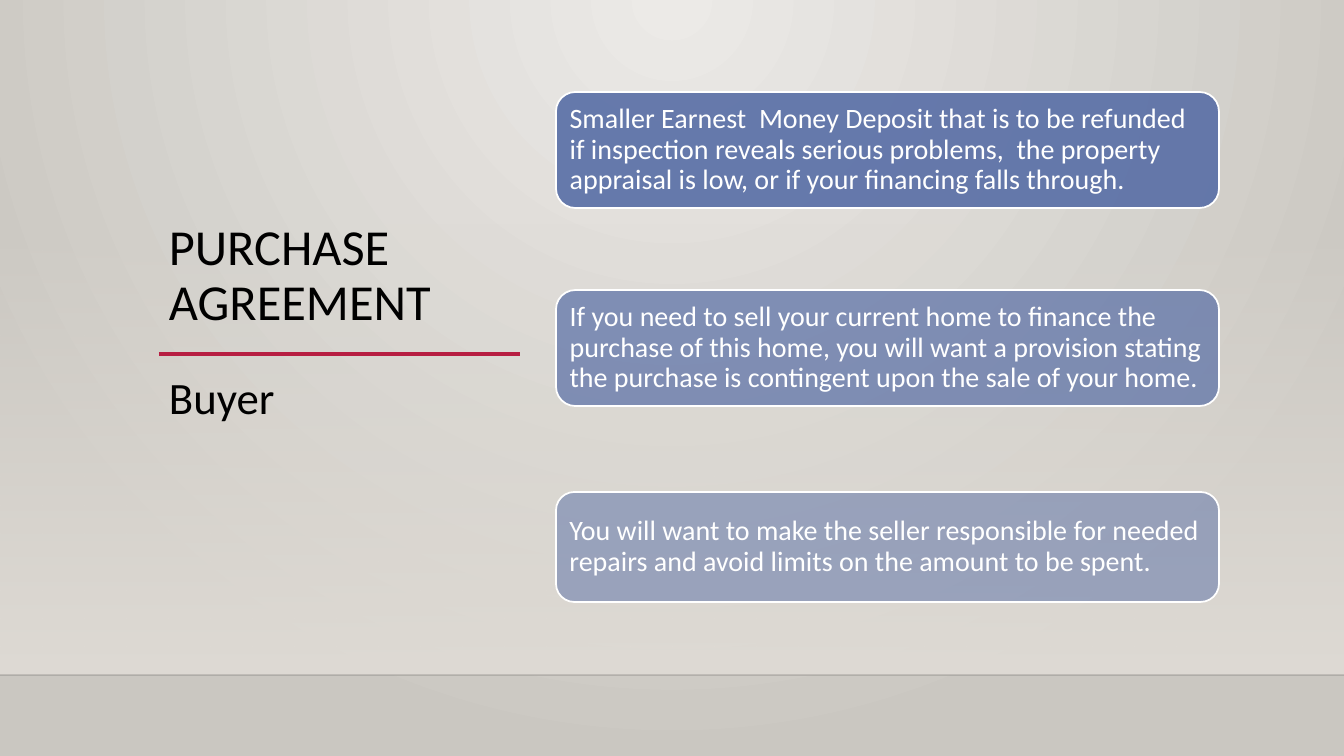
"""Build the buyer's purchase agreement slide."""
from pptx import Presentation
from pptx import util as u
from pptx.dml.color import RGBColor
from pptx.enum import shapes, text
from pptx.oxml import parse_xml
from pptx.oxml.ns import nsdecls, qn

TITLE = "PURCHASE AGREEMENT"
ROLE = "Buyer"
CARDS = [
    ("Smaller Earnest  Money Deposit that is to be refunded if inspection reveals "
     "serious problems,  the property appraisal is low, or if your financing falls through.",
     92, 116, 90),
    ("If you need to sell your current home to finance the purchase of this home, you will "
     "want a provision stating the purchase is contingent upon the sale of your home.",
     290, 116, 70),
    ("You will want to make the seller responsible for needed repairs and avoid limits "
     "on the amount to be spent.",
     492, 110, 50),
]
THEME = {
    "font": "Calibri", "ink": "000000", "white": "FFFFFF", "card": "586EA6",
    "rule": "B71E42", "edge": "000001", "glow": "ECEAE7", "wall": "CAC7C1",
    "haze": "DFDBD5", "title": 36, "role": 32, "body": 20,
}
WIDE, HIGH = 1344, 756
FLOOR, MID = 675, 354
LEFT, SPAN = 159, 361
CARD_X, CARD_W = 556, 663


def px(n):
    return round(n * 914400 / 100.8)


def box(*nums):
    return [px(n) for n in nums]


def rgb(key):
    return RGBColor.from_string(THEME[key])


def fade(fill, alpha):
    tint = fill._xPr.find(".//" + qn("a:srgbClr"))
    tint.append(parse_xml(f'<a:alpha {nsdecls("a")} val="{alpha * 1000}"/>'))


def blend(root, start, end, alpha, shade):
    old = root.find(".//" + qn("a:gradFill"))
    new = parse_xml(
        f'<a:gradFill {nsdecls("a")} rotWithShape="1"><a:gsLst>'
        f'<a:gs pos="0"><a:srgbClr val="{THEME[start]}"><a:alpha val="{alpha * 1000}"/></a:srgbClr></a:gs>'
        f'<a:gs pos="100000"><a:srgbClr val="{THEME[end]}"/></a:gs>'
        f'</a:gsLst>{shade}</a:gradFill>')
    old.getparent().replace(old, new)


def rule(slide, left, right, y, key, width, alpha=100):
    line = slide.shapes.add_connector(
        shapes.MSO_CONNECTOR.STRAIGHT, *box(left, y, right, y))
    line.line.color.rgb = rgb(key)
    line.line.width = u.Pt(width)
    if alpha < 100:
        fade(line.line.fill, alpha)
    line.element.spPr.append(parse_xml(f'<a:effectLst {nsdecls("a")}/>'))


def write(shape, words, size, key, anchor, space):
    frame = shape.text_frame
    frame.text = words
    frame.word_wrap = True
    frame.vertical_anchor = anchor
    para = frame.paragraphs[0]
    para.alignment = text.PP_ALIGN.LEFT
    para.line_spacing = space
    font = para.runs[0].font
    font.name, font.size = THEME["font"], u.Pt(THEME[size])
    font.color.rgb = rgb(key)
    return frame


def scene(slide):
    slide.background.fill.gradient()
    blend(slide.element, "glow", "wall", 100,
          '<a:path path="circle"><a:fillToRect l="43000" r="43000" b="100000"/></a:path>')
    haze = slide.shapes.add_shape(
        shapes.MSO_SHAPE.RECTANGLE, *box(0, 223, WIDE, FLOOR - 223))
    haze.shadow.inherit = False
    haze.line.fill.background()
    haze.fill.gradient()
    blend(haze.element, "haze", "haze", 0, '<a:lin ang="5400000" scaled="0"/>')
    rule(slide, 0, WIDE, FLOOR, "edge", 1, 20)
    rule(slide, LEFT, LEFT + SPAN, MID, "rule", 2.5)


def card(slide, words, top, high, alpha):
    tile = slide.shapes.add_shape(
        shapes.MSO_SHAPE.ROUNDED_RECTANGLE, *box(CARD_X, top, CARD_W, high))
    tile.shadow.inherit = False
    tile.fill.solid()
    tile.fill.fore_color.rgb = rgb("card")
    fade(tile.fill, alpha)
    tile.line.color.rgb = rgb("white")
    tile.line.width = u.Pt(1.25)
    frame = write(tile, words, "body", "white", text.MSO_ANCHOR.MIDDLE, 0.9)
    frame.margin_left = frame.margin_right = px(8)
    frame.margin_top = frame.margin_bottom = px(8)


def main():
    deck = Presentation()
    deck.slide_width, deck.slide_height = box(WIDE, HIGH)
    slide = deck.slides.add_slide(deck.slide_layouts[6])
    scene(slide)
    head = slide.shapes.add_textbox(*box(LEFT, 88, SPAN, 248))
    write(head, TITLE, "title", "ink", text.MSO_ANCHOR.BOTTOM, 0.9)
    for item in CARDS:
        card(slide, *item)
    role = slide.shapes.add_textbox(*box(LEFT, MID, SPAN, 248))
    write(role, ROLE, "role", "ink", text.MSO_ANCHOR.TOP, 1.2)
    deck.save("out.pptx")


if __name__ == "__main__":
    main()
